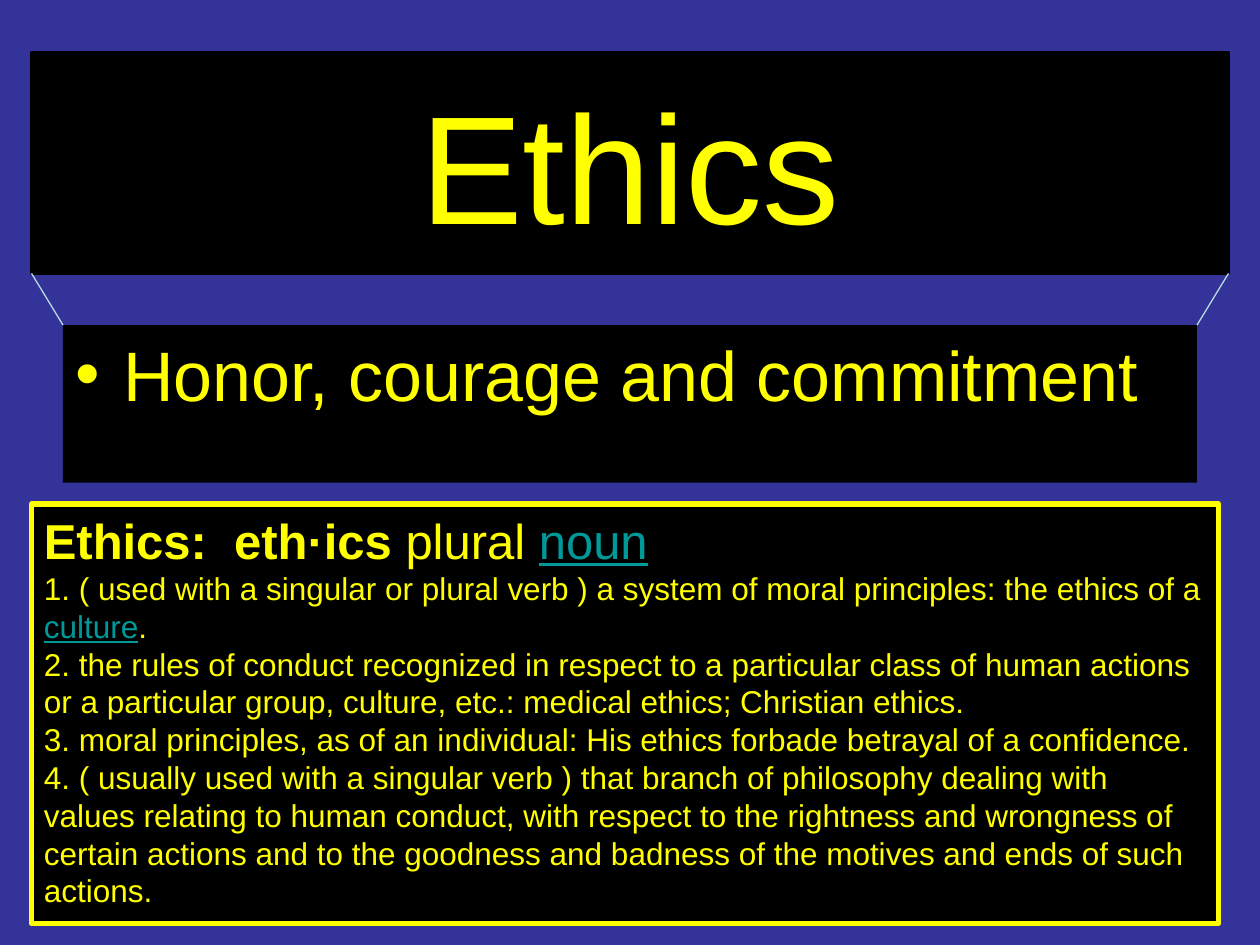
import pptx
import pptx.util
import pptx.dml.color
import pptx.enum.shapes
import pptx.enum.text
from lxml import etree
from pptx.oxml.ns import qn
from pptx.util import Inches, Pt

COLORS = {
    "background": "333399",
    "panel": "000000",
    "text": "FFFF00",
    "term": "009999",
    "connector": "B6DCDF",
}

TERM = {"underline": True, "color": "term"}
BOLD = {"bold": True}
DEFINITION = [
    (28, [("Ethics:  eth·ics ", BOLD), ("plural ", {}), ("noun", TERM)]),
    (18, [("1. ( used with a singular or plural verb ) a system of moral "
           "principles: the ethics of a ", {}), ("culture", TERM), (".", {})]),
    (18, [("2. the rules of conduct recognized in respect to a particular class "
           "of human actions or a particular group, culture, etc.: medical "
           "ethics; Christian ethics.", {})]),
    (18, [("3. moral principles, as of an individual: His ethics forbade "
           "betrayal of a confidence.", {})]),
    (18, [("4. ( usually used with a singular verb ) that branch of philosophy "
           "dealing with values relating to human conduct, with respect to the "
           "rightness and wrongness of certain actions and to the goodness and "
           "badness of the motives and ends of such actions.", {})]),
]


def rgb(name):
    return pptx.dml.color.RGBColor.from_string(COLORS[name])


def add_panel(slide, left, top, width, height, paragraphs, line=None,
              line_width=0, anchor="TOP", align="LEFT"):
    """Add a black rectangle; paragraphs holds (size, [(text, format)])."""
    panel = slide.shapes.add_shape(
        pptx.enum.shapes.MSO_SHAPE.RECTANGLE,
        Inches(left), Inches(top), Inches(width), Inches(height))
    panel.shadow.inherit = False
    panel.fill.solid()
    panel.fill.fore_color.rgb = rgb("panel")
    if line:
        panel.line.color.rgb = rgb(line)
        panel.line.width = Pt(line_width)
    else:
        panel.line.fill.background()

    frame = panel.text_frame
    frame.word_wrap = True
    frame.vertical_anchor = getattr(pptx.enum.text.MSO_ANCHOR, anchor)
    for index, (size, spans) in enumerate(paragraphs):
        para = frame.add_paragraph() if index else frame.paragraphs[0]
        para.alignment = getattr(pptx.enum.text.PP_ALIGN, align)
        for text, values in spans:
            add_span(para, text, size, values)
    return panel


def add_span(para, text, size, values):
    span = para.add_run()
    span.text = text
    font = {"name": "Arial", "size": Pt(size), "bold": False, "color": "text"}
    font.update(values)
    span.font.color.rgb = rgb(font.pop("color"))
    for name, value in font.items():
        setattr(span.font, name, value)


def add_bullet(para, indent):
    properties = para._p.get_or_add_pPr()
    properties.set("marL", str(Inches(indent)))
    properties.set("indent", str(-Inches(indent)))
    color = etree.SubElement(properties, qn("a:buClr"))
    etree.SubElement(color, qn("a:srgbClr"), val=COLORS["text"])
    etree.SubElement(properties, qn("a:buFont"), typeface="Arial")
    etree.SubElement(properties, qn("a:buChar"), char="•")


def add_line(slide, start, end):
    line = slide.shapes.add_connector(
        pptx.enum.shapes.MSO_CONNECTOR.STRAIGHT,
        *(Inches(value) for value in (*start, *end)))
    line.line.color.rgb = rgb("connector")
    line.line.width = Pt(0.75)
    etree.SubElement(line._element.spPr, qn("a:effectLst"))


def main():
    deck = pptx.Presentation()
    deck.slide_width, deck.slide_height = Inches(10), Inches(7.5)
    slide = deck.slides.add_slide(deck.slide_layouts[6])
    slide.background.fill.solid()
    slide.background.fill.fore_color.rgb = rgb("background")

    values = add_panel(slide, 0.5, 2.58, 9, 1.25,
                       [(40, [("Honor, courage and commitment", {})])])
    add_bullet(values.text_frame.paragraphs[0], 0.38)
    add_panel(slide, 0.25, 0.42, 9.5, 1.75, [(88, [("Ethics", {})])],
              line="panel", line_width=2, anchor="MIDDLE", align="CENTER")
    for title_x, values_x in ((0.25, 0.5), (9.75, 9.5)):
        add_line(slide, (title_x, 2.17), (values_x, 2.58))
    add_panel(slide, 0.25, 4, 9.42, 3.33, DEFINITION, line="text", line_width=3)

    deck.save("out.pptx")


if __name__ == "__main__":
    main()
